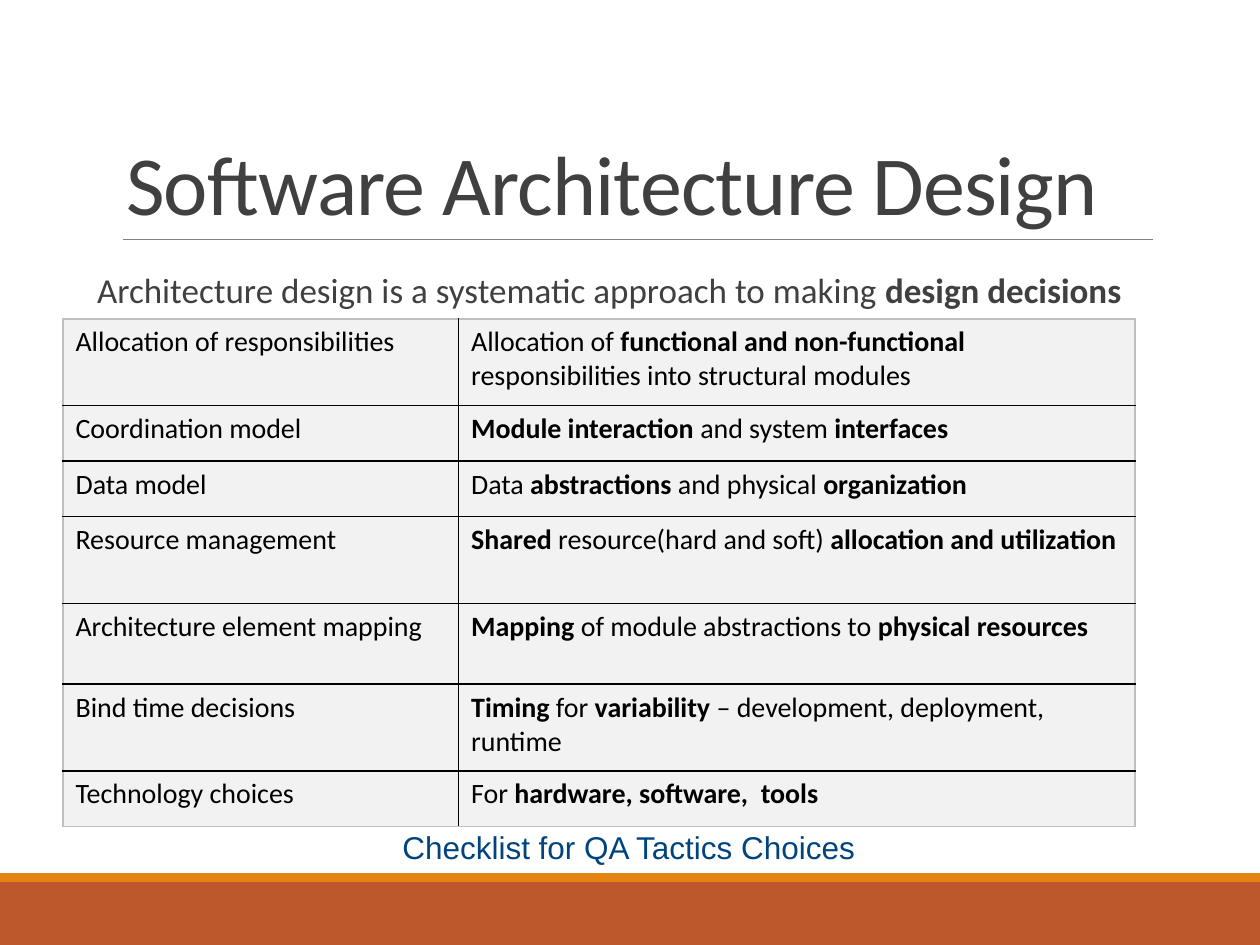
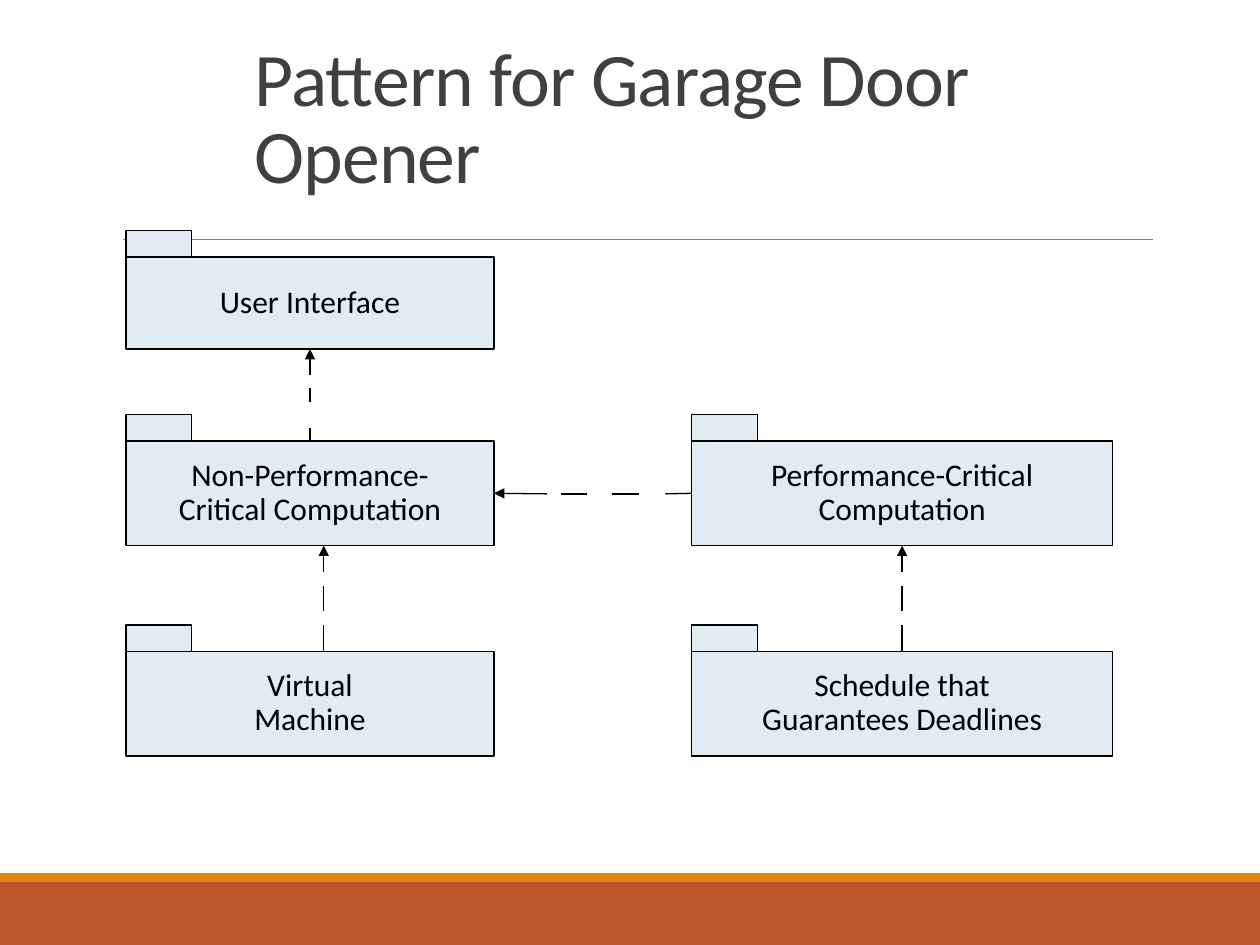
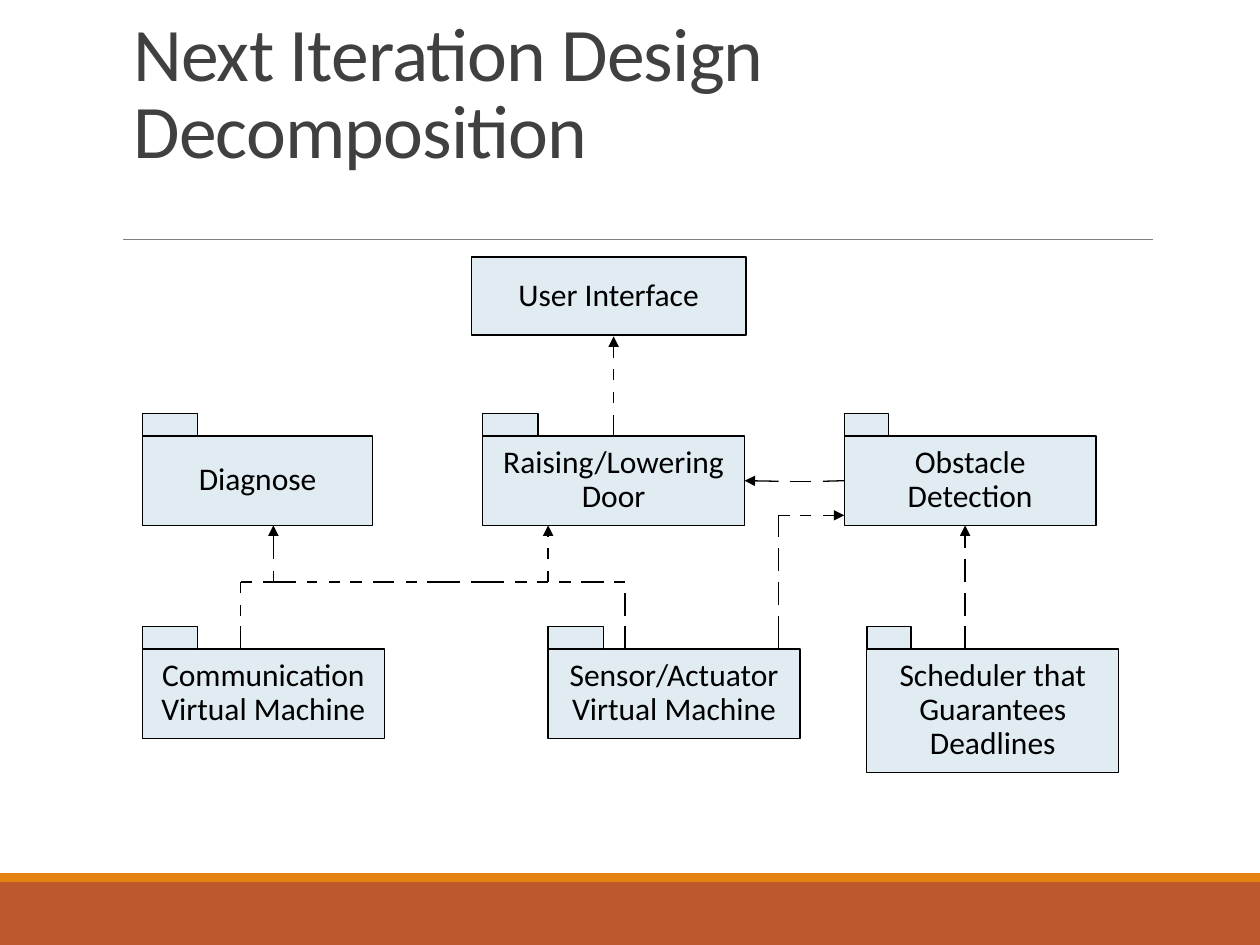
from lxml import etree
from pptx import Presentation
from pptx.dml.color import RGBColor
from pptx.enum.shapes import MSO_CONNECTOR, MSO_SHAPE
from pptx.enum.text import MSO_ANCHOR, MSO_AUTO_SIZE, PP_ALIGN
from pptx.oxml.ns import qn
from pptx.util import Emu, Pt

PX = 9144
RECT = MSO_SHAPE.RECTANGLE
LINE = MSO_CONNECTOR.STRAIGHT
CENTER, LEFT = PP_ALIGN.CENTER, PP_ALIGN.LEFT
TOP, MIDDLE, BOTTOM = MSO_ANCHOR.TOP, MSO_ANCHOR.MIDDLE, MSO_ANCHOR.BOTTOM
FIXED, GROW = MSO_AUTO_SIZE.NONE, MSO_AUTO_SIZE.SHAPE_TO_FIT_TEXT
UP, WEST, DOWN, EAST = range(4)

BLACK = RGBColor(0x00, 0x00, 0x00)
GREY = RGBColor(0x40, 0x40, 0x40)
RULE = RGBColor(0x80, 0x80, 0x80)
EDGE = RGBColor(0xBF, 0xBF, 0xBF)
PALE = RGBColor(0xF2, 0xF2, 0xF2)
RUST = RGBColor(0xBD, 0x58, 0x2C)
AMBER = RGBColor(0xE4, 0x83, 0x12)
SKY = RGBColor(0xE0, 0xEB, 0xF2)
NAVY = RGBColor(0x00, 0x44, 0x7F)

COLS = [314, 537]
ROWS = [
    (69, "Allocation of responsibilities",
     "Allocation of *functional and non-functional *responsibilities into structural modules"),
    (44, "Coordination model", "*Module interaction* and system *interfaces*"),
    (44, "Data model", "Data *abstractions* and physical *organization*"),
    (69, "Resource management",
     "*Shared* resource(hard and soft) *allocation and utilization*"),
    (64, "Architecture element mapping",
     "*Mapping* of module abstractions to *physical resources*"),
    (69, "Bind time decisions",
     "*Timing* for *variability* – development, deployment, runtime"),
    (44, "Technology choices", "For *hardware, software,  tools*"),
]
RISE = [517, 496, 485, 465, 454, 433]
BUS = [191, 200, 209, 235, 244, 252, 261, 270, 278, 287, 296, 313, 322, 331,
       339, 365, 374, 400, 409, 418, 426, 435, 444, 453, 461, 479, 487, 496]


def px(*nums):
    """Turn px lengths into EMU."""
    return [Emu(num * PX) for num in nums]


def style(para, size, color, face="Calibri", align=LEFT, space=None):
    """Set the font, alignment and line spacing of a paragraph."""
    para.alignment = align
    para.line_spacing = space
    font = para.font
    font.name, font.size, font.color.rgb = face, Pt(size), color


def rich(para, text):
    """Add runs, with the parts between asterisks in bold."""
    for num, part in enumerate(text.split("*")):
        if part:
            run = para.add_run()
            run.text = part
            if num % 2:
                run.font.bold = True


def place(shape, box):
    """Move a placeholder to a box."""
    shape.left, shape.top, shape.width, shape.height = px(*box)


def block(slide, box, fill, edge=None):
    """Draw a filled rectangle."""
    shape = slide.shapes.add_shape(RECT, *px(*box))
    shape.shadow.inherit = False
    shape.fill.solid()
    shape.fill.fore_color.rgb = fill
    if edge is None:
        shape.line.fill.background()
    else:
        shape.line.color.rgb = edge
        shape.line.width = Pt(0.75)
    return shape


def stroke(slide, start, end, color=BLACK, width=0.75):
    """Draw a straight line."""
    line = slide.shapes.add_connector(LINE, *px(*start, *end))
    line.line.color.rgb = color
    line.line.width = Pt(width)
    etree.SubElement(line._element.spPr, qn("a:effectLst"))
    return line


def dash(slide, at, stops, flat=False, tip=True, start=None, end=None):
    """Draw dashes between pairs of stops, on a column or a flat row."""
    lines = []
    for pair in zip(stops[::2], stops[1::2]):
        ends = [(stop, at) if flat else (at, stop) for stop in pair]
        lines.append(stroke(slide, *ends))
    if tip:
        ln = lines[-1].line._get_or_add_ln()
        etree.SubElement(ln, qn("a:tailEnd"), type="triangle")
    if start:
        lines[0].begin_connect(*start)
    if end:
        lines[-1].end_connect(*end)


def frame(deck, layout, title, box, size):
    """Add a slide with its title, rule and bands."""
    slide = deck.slides.add_slide(deck.slide_layouts[layout])
    block(slide, (0, 700, 1000, 50), RUST)
    block(slide, (0, 693, 1000, 7), AMBER)
    stroke(slide, (98, 190), (915, 190), RULE, 0.5)
    head = slide.shapes.title
    place(head, box)
    text = head.text_frame
    text.text = title
    text.word_wrap, text.auto_size = True, FIXED
    text.vertical_anchor = BOTTOM
    para = text.paragraphs[0]
    style(para, size, GREY, space=0.85)
    para.font._rPr.set("spc", "-50")
    return slide


def lead(slide, box, words):
    """Fill the body placeholder with one line of text."""
    body = slide.placeholders[1]
    place(body, box)
    text = body.text_frame
    text.word_wrap, text.auto_size = True, FIXED
    text.vertical_anchor = TOP
    text.margin_left, text.margin_right, text.margin_top = px(0, 0, 57)
    para = text.paragraphs[0]
    rich(para, words)
    props = para._p.get_or_add_pPr()
    props.set("marL", str(10 * PX))
    props.set("indent", "0")
    etree.SubElement(props, qn("a:buNone"))
    style(para, 20, GREY, space=0.9)


def border(cell, side, color):
    """Draw one side of a cell."""
    props = cell._tc.get_or_add_tcPr()
    line = etree.SubElement(props, qn("a:ln" + side), w=str(Pt(1)))
    fill = etree.SubElement(line, qn("a:solidFill"))
    etree.SubElement(fill, qn("a:srgbClr"), val=str(color))


def grid(slide, left, top):
    """Draw the table of design decisions."""
    size = sum(COLS), sum(row[0] for row in ROWS)
    shape = slide.shapes.add_table(len(ROWS), len(COLS), *px(left, top, *size))
    table = shape.table
    table.first_row = table.horz_banding = False
    for col, width in zip(table.columns, px(*COLS)):
        col.width = width
    for num, (high, *words) in enumerate(ROWS):
        table.rows[num].height = Emu(high * PX)
        for col, text in enumerate(words):
            cell = table.cell(num, col)
            para = cell.text_frame.paragraphs[0]
            rich(para, text)
            style(para, 16, BLACK)
            outer = {"L": col == 0, "R": col == len(COLS) - 1,
                     "T": num == 0, "B": num == len(ROWS) - 1}
            for side, rim in outer.items():
                border(cell, side, EDGE if rim else BLACK)
            cell.fill.solid()
            cell.fill.fore_color.rgb = PALE


def note(slide, box, words):
    """Add a centred caption."""
    text = slide.shapes.add_textbox(*px(*box)).text_frame
    text.text = words
    text.word_wrap, text.auto_size = False, GROW
    style(text.paragraphs[0], 18, NAVY, "Arial", CENTER, 0.9)


def pack(slide, box, words, tab=None):
    """Draw a labelled box, with a tab of the given size on top."""
    shape = block(slide, box, SKY, BLACK)
    text = shape.text_frame
    text.text = words
    text.word_wrap = False
    text.vertical_anchor = MIDDLE
    for para in text.paragraphs:
        style(para, 18, BLACK, align=CENTER, space=0.9)
    if tab:
        block(slide, (box[0], box[1] - tab[1], *tab), SKY, BLACK)
    return shape


def choices(deck):
    """Build the slide with the table of decisions."""
    slide = frame(deck, 1, "Software Architecture Design", (90, 31, 825, 159), 48)
    lead(slide, (67, 160, 843, 424),
         "Architecture design is a systematic approach to making *design decisions*")
    grid(slide, 50, 253)
    note(slide, (292, 656, 414, 37), "Checklist for QA Tactics Choices")


def pattern(deck):
    """Build the slide with the garage door pattern."""
    slide = frame(deck, 5, "Pattern for Garage Door Opener", (192, 51, 606, 112), 43.2)
    tab = 52, 21
    face = pack(slide, (100, 204, 292, 73), "User Interface", tab)
    slow = pack(slide, (100, 350, 292, 83), "Non-Performance-\nCritical Computation", tab)
    pack(slide, (100, 517, 292, 83), "Virtual\nMachine", tab)
    fast = pack(slide, (549, 350, 334, 83), "Performance-Critical\nComputation", tab)
    plan = pack(slide, (549, 517, 334, 83), "Schedule that\nGuarantees Deadlines", tab)
    dash(slide, 246, [350, 340, 319, 308, 298, 277], start=(slow, UP), end=(face, DOWN))
    dash(slide, 392, [549, 528, 507, 486, 466, 445, 434, 392], flat=True,
         start=(fast, WEST), end=(slow, EAST))
    dash(slide, 716, RISE, start=(plan, UP), end=(fast, DOWN))
    dash(slide, 257, RISE)


def parts(deck):
    """Build the slide with the next decomposition."""
    slide = frame(deck, 5, "Next Iteration Design Decomposition", (96, 59, 761, 84), 43.2)
    wide, slim = (44, 18), (35, 18)
    pack(slide, (374, 204, 218, 62), "User Interface")
    pack(slide, (113, 346, 183, 71), "Diagnose", wide)
    door = pack(slide, (383, 346, 208, 71), "Raising/Lowering\nDoor", wide)
    guard = pack(slide, (670, 346, 200, 71), "Obstacle\nDetection", slim)
    pack(slide, (113, 515, 192, 71), "Communication\nVirtual Machine", wide)
    pack(slide, (435, 515, 200, 71), "Sensor/Actuator\nVirtual Machine", wide)
    pack(slide, (688, 515, 200, 98), "Scheduler that\nGuarantees\nDeadlines", slim)
    dash(slide, 487, [346, 329, 320, 311, 302, 293, 284, 267], start=(door, UP))
    dash(slide, 382, [670, 653, 644, 627, 618, 592], flat=True,
         start=(guard, WEST), end=(door, EAST))
    dash(slide, 191, [515, 497, 489, 480, 471, 462], tip=False)
    dash(slide, 462, BUS, flat=True, tip=False)
    dash(slide, 496, [515, 497, 489, 471], tip=False)
    dash(slide, 217, [462, 453, 444, 417])
    dash(slide, 435, [462, 453, 444, 435, 426, 417])
    dash(slide, 618, [515, 489, 480, 462, 453, 435, 426, 409], tip=False)
    dash(slide, 409, [618, 627, 635, 644, 653, 670], flat=True)
    dash(slide, 766, [515, 497, 489, 471, 462, 444, 435, 417])


def main():
    """Build and save the deck."""
    deck = Presentation()
    deck.slide_width, deck.slide_height = px(1000, 750)
    for build in (choices, pattern, parts):
        build(deck)
    deck.save("out.pptx")


if __name__ == "__main__":
    main()
